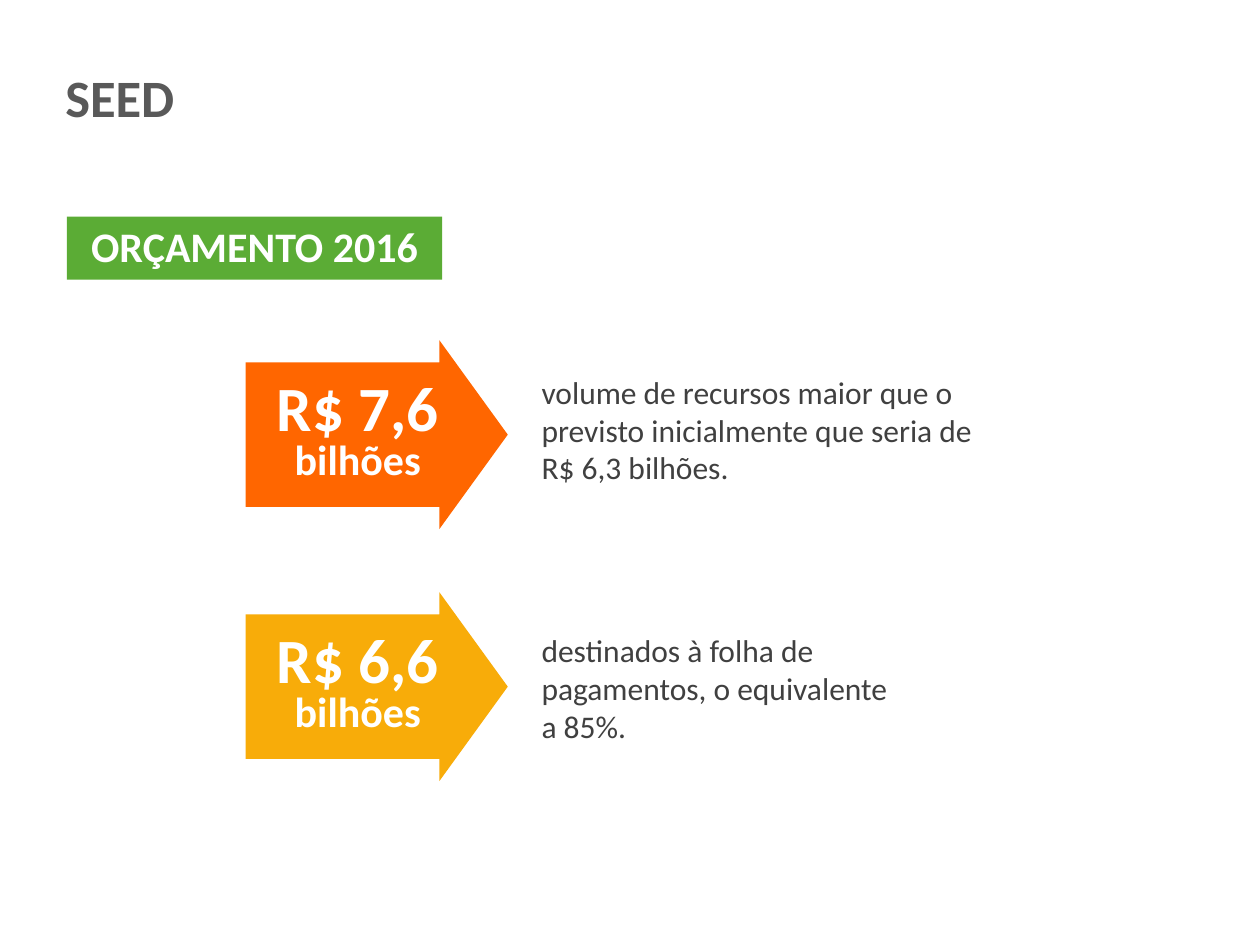
from pptx import Presentation
from pptx import util as u
from pptx.dml.color import RGBColor
from pptx.enum import shapes, text

WHITE = "FFFFFF"
LEFT, MID = text.PP_ALIGN.LEFT, text.PP_ALIGN.CENTER


def paint(fmt, color):
    """Give a font or fill one solid colour."""
    if hasattr(fmt, "solid"):
        fmt.solid()
        fmt.fore_color.rgb = RGBColor.from_string(color)
    else:
        fmt.color.rgb = RGBColor.from_string(color)


def write(shape, lines, color, bold=False, align=LEFT, gap=1.0, wrap=True):
    """Write (words, size) lines into a shape and return its frame."""
    frame = shape.text_frame
    frame.word_wrap = wrap
    for i, (words, size) in enumerate(lines):
        para = frame.add_paragraph() if i else frame.paragraphs[0]
        para.alignment, para.line_spacing = align, gap
        run = para.add_run()
        run.text = words
        run.font.name, run.font.size, run.font.bold = "Calibri", u.Pt(size), bold
        paint(run.font, color)
    return frame


def label(slide, box):
    """Add an empty text box."""
    return slide.shapes.add_textbox(*map(u.Inches, box))


def block(slide, kind, box, color):
    """Add a flat shape without outline."""
    shape = slide.shapes.add_shape(kind, *map(u.Inches, box))
    shape.shadow.inherit = False
    paint(shape.fill, color)
    shape.line.fill.background()
    return shape


def title(slide, box, words):
    """Place the slide title at the foot of its box."""
    frame = write(label(slide, box), [(words, 30)], "595959", True, gap=0.8)
    frame.vertical_anchor = text.MSO_ANCHOR.BOTTOM


def banner(slide, box, words):
    """Place the green section banner."""
    bar = block(slide, shapes.MSO_SHAPE.RECTANGLE, box, "5BAC35")
    frame = write(bar, [(words, 24)], WHITE, True, MID)
    frame.vertical_anchor = text.MSO_ANCHOR.MIDDLE
    frame.margin_bottom = u.Inches(0.09)


def amount(slide, box, color, value, note, drop, span):
    """Place an arrow with its amount and the note it points to."""
    x, y, w, h = box
    arrow = block(slide, shapes.MSO_SHAPE.RIGHT_ARROW, box, color)
    arrow.adjustments[0], arrow.adjustments[1] = 0.765, 0.362
    lines = [(value, 36), ("bilhões", 24)]
    sum_box = label(slide, (x + 0.14, y + 0.29, 1.5, 0.92))
    write(sum_box, lines, WHITE, True, MID, 0.8, False)
    write(label(slide, (x + w + 0.17, y + drop, span, 1.01)), [(note, 18)], "404040")


def main():
    """Build and save the slide."""
    deck = Presentation()
    deck.slide_width, deck.slide_height = u.Inches(10), u.Inches(7.5)
    slide = deck.slides.add_slide(deck.slide_layouts[6])
    title(slide, (0.42, 0.11, 3.09, 0.95), "SEED")
    banner(slide, (0.53, 1.72, 2.98, 0.5), "ORÇAMENTO 2016")
    rows = [
        ("FF6600", "R$ 7,6", "volume de recursos maior que o previsto "
         "inicialmente que seria de R$ 6,3 bilhões.", 0.21, 3.67),
        ("F8AC09", "R$ 6,6", "destinados à folha de pagamentos, "
         "o equivalente a 85%.", 0.26, 2.97),
    ]
    for i, row in enumerate(rows):
        amount(slide, (1.95, 2.7 + 2 * i, 2.08, 1.5), *row)
    deck.save("out.pptx")


if __name__ == "__main__":
    main()
